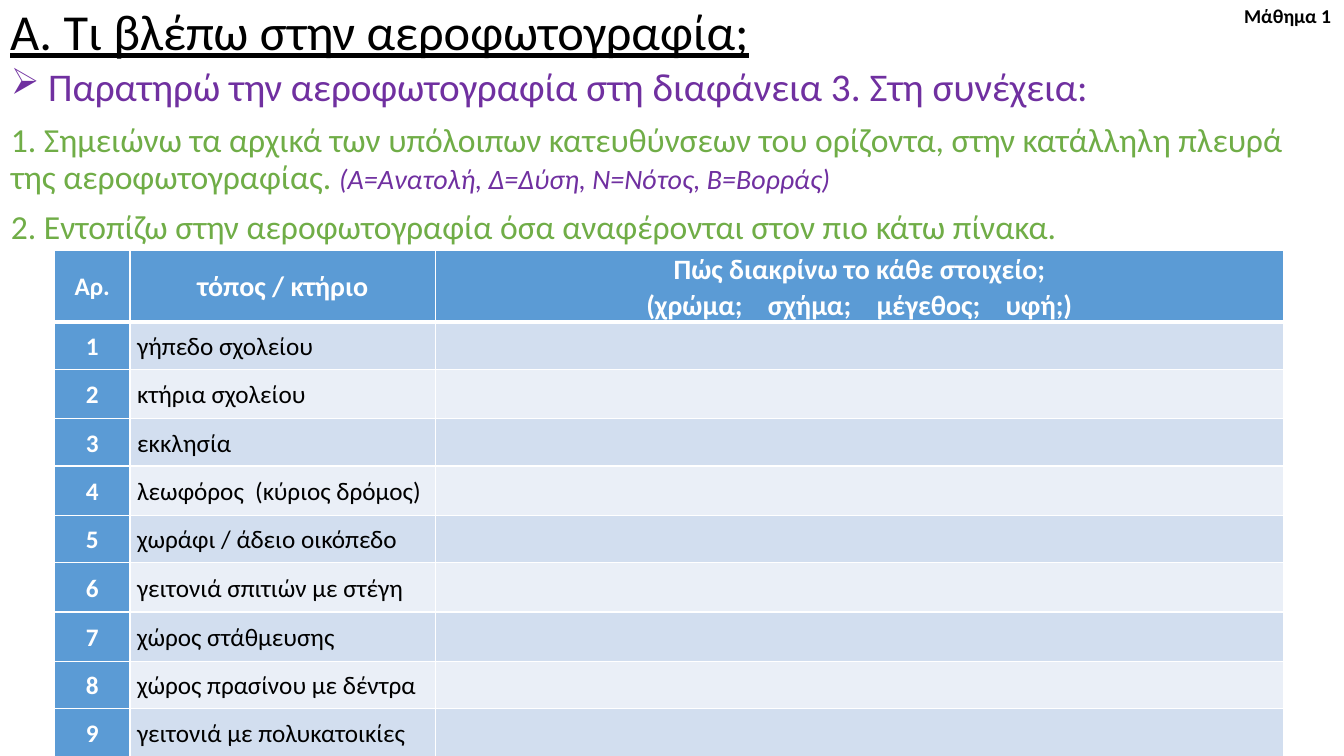
import pptx
import pptx.util
import pptx.dml.color
import pptx.enum.text
import pptx.oxml
import pptx.oxml.ns
from dataclasses import dataclass

Inches = pptx.util.Inches
Pt = pptx.util.Pt
ALIGN = pptx.enum.text.PP_ALIGN
ANCHOR = pptx.enum.text.MSO_ANCHOR
FIT = pptx.enum.text.MSO_AUTO_SIZE
NS = pptx.oxml.ns.nsdecls("a")


@dataclass(frozen=True)
class Theme:
    font: str = "Calibri"
    black: str = "000000"
    white: str = "FFFFFF"
    purple: str = "7030A0"
    green: str = "70AD47"
    blue: str = "5B9BD5"
    bands: tuple = ("D2DEEF", "EAEFF7")
    title: int = 36
    lead: int = 28
    mark: int = 26
    task: int = 24
    head: int = 20
    cell: int = 18
    tag: int = 14


def rgb(code):
    return pptx.dml.color.RGBColor.from_string(code)


def apply(target, values):
    """Set each named attribute of the target."""
    for name, value in values.items():
        setattr(target, name, value)


class Page:
    def __init__(self, deck, theme):
        self.theme = theme
        self.slide = deck.slides.add_slide(deck.slide_layouts[5])

    def place(self, shape, box):
        names = ("left", "top", "width", "height")
        apply(shape, dict(zip(names, map(Inches, box))))

    def fill(self, para, runs, **form):
        """Fill a paragraph with (text, size, colour, font values) runs."""
        apply(para, form)
        for text, size, color, extra in runs:
            run = para.add_run()
            run.text = text
            apply(run.font, {"name": self.theme.font, "size": Pt(size), **extra})
            run.font.color.rgb = rgb(color)

    def title(self, box, text):
        shape = self.slide.shapes.title
        self.place(shape, box)
        frame = shape.text_frame
        apply(frame, {"auto_size": FIT.NONE, "word_wrap": True,
                      "vertical_anchor": ANCHOR.MIDDLE})
        run = (text, self.theme.title, self.theme.black, {"underline": True})
        self.fill(frame.paragraphs[0], [run], alignment=ALIGN.LEFT, line_spacing=0.9)

    def text(self, box, paras, **form):
        frame = self.slide.shapes.add_textbox(*map(Inches, box)).text_frame
        frame.word_wrap = True
        for i, runs in enumerate(paras):
            para = frame.add_paragraph() if i else frame.paragraphs[0]
            self.fill(para, runs, **form)
        return frame

    def bullet(self, para, mark, indent):
        props = para._p.get_or_add_pPr()
        props.set("marL", str(Inches(indent)))
        props.set("indent", str(-Inches(indent)))
        props.append(pptx.oxml.parse_xml(f'<a:buChar {NS} char="{mark}"/>'))

    def cell(self, cell, lines, size, fill, head=False, strong=True, mid=True):
        theme = self.theme
        apply(cell, {"margin_left": Inches(0.07), "margin_right": Inches(0.07),
                     "margin_top": 0, "margin_bottom": 0,
                     "vertical_anchor": ANCHOR.MIDDLE})
        for side in "LRTB":
            width = Pt(3 if head and side == "B" else 1)
            cell._tc.get_or_add_tcPr().append(pptx.oxml.parse_xml(
                f'<a:ln{side} {NS} w="{width}"><a:solidFill>'
                f'<a:srgbClr val="{theme.white}"/></a:solidFill></a:ln{side}>'))
        cell.fill.solid()
        cell.fill.fore_color.rgb = rgb(fill)
        color = theme.white if strong else theme.black
        frame = cell.text_frame
        for i, line in enumerate(lines):
            para = frame.add_paragraph() if i else frame.paragraphs[0]
            self.fill(para, [(line, size, color, {"bold": strong})],
                      alignment=ALIGN.CENTER if mid else ALIGN.LEFT, line_spacing=1.07)

    def table(self, box, cols, rows, heads, places):
        theme = self.theme
        grid = self.slide.shapes.add_table(len(rows), len(cols), *map(Inches, box)).table
        for col, width in zip(grid.columns, cols):
            col.width = Inches(width)
        for row, height in zip(grid.rows, rows):
            row.height = Inches(height)
        for i, (lines, size) in enumerate(heads):
            self.cell(grid.cell(0, i), lines, size, theme.blue, head=True)
        for i, place in enumerate(places, 1):
            band = theme.bands[(i - 1) % 2]
            self.cell(grid.cell(i, 0), [str(i)], theme.cell, theme.blue)
            self.cell(grid.cell(i, 1), [place], theme.cell, band, strong=False, mid=False)
            self.cell(grid.cell(i, 2), [], theme.cell, band)


def main():
    deck = pptx.Presentation()
    apply(deck, {"slide_width": Inches(13.33), "slide_height": Inches(7.5)})
    theme = Theme()
    page = Page(deck, theme)

    page.title((0, -0.29, 9.37, 1.25), "Α. Τι βλέπω στην αεροφωτογραφία;")
    tasks = [
        [(" ", theme.mark, theme.purple, {}),
         ("Παρατηρώ την αεροφωτογραφία στη διαφάνεια 3. Στη συνέχεια:",
          theme.lead, theme.purple, {})],
        [("1. Σημειώνω τα αρχικά των υπόλοιπων κατευθύνσεων του ορίζοντα, "
          "στην κατάλληλη πλευρά της αεροφωτογραφίας. ", theme.task, theme.green, {}),
         ("(Α=Ανατολή, Δ=Δύση, Ν=Νότος, Β=Βορράς)",
          theme.head, theme.purple, {"italic": True})],
        [("2. Εντοπίζω στην αεροφωτογραφία όσα αναφέρονται στον πιο κάτω πίνακα.",
          theme.task, theme.green, {})],
    ]
    frame = page.text((0.01, 0.62, 13.32, 6.71), tasks,
                      line_spacing=0.9, space_before=Pt(10))
    page.bullet(frame.paragraphs[0], "➢", 0.25)

    heads = [
        (["Αρ."], theme.cell),
        (["τόπος / κτήριο"], theme.head),
        (["Πώς διακρίνω το κάθε στοιχείο;",
          "(χρώμα;    σχήμα;    μέγεθος;    υφή;)"], theme.head),
    ]
    places = ["γήπεδο σχολείου", "κτήρια σχολείου", "εκκλησία",
              "λεωφόρος  (κύριος δρόμος)", "χωράφι / άδειο οικόπεδο",
              "γειτονιά σπιτιών με στέγη", "χώρος στάθμευσης",
              "χώρος πρασίνου με δέντρα", "γειτονιά με πολυκατοικίες"]
    rows = [0.6, 0.47, 0.49, 0.47, 0.49, 0.47, 0.49, 0.49, 0.47, 0.47]
    page.table((0.54, 2.48, 12.19, 5.01), (0.75, 3.03, 8.41), rows, heads, places)

    page.text((12.24, -0.01, 1.09, 0.34),
              [[("Μάθημα 1", theme.tag, theme.black, {"bold": True})]])
    deck.save("out.pptx")


if __name__ == "__main__":
    main()
